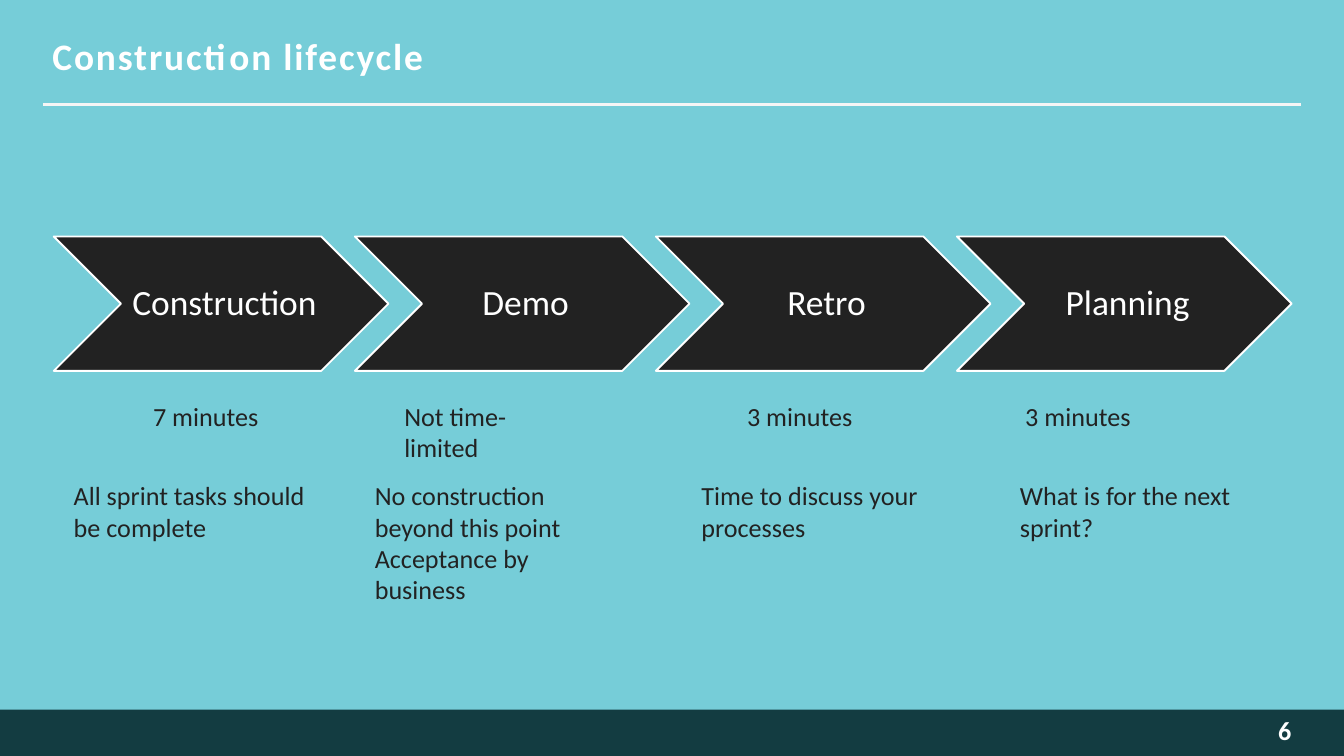
import pptx
import pptx.dml.color
import pptx.enum.shapes
import pptx.enum.text
import pptx.oxml
import pptx.util
from pptx.util import Inches

COLORS = {
    "background": "76CDD8",
    "footer": "133C41",
    "rule": "F5F5F5",
    "white": "FFFFFF",
    "page": "FEFEFE",
    "dark": "222222",
}
ALIGN = pptx.enum.text.PP_ALIGN
ANCHOR = pptx.enum.text.MSO_ANCHOR
SHAPE = pptx.enum.shapes.MSO_SHAPE

STAGE_PITCH = 2.24
# name, time limit, time offset and width, notes, notes offset, width and height
STAGES = [
    ("Construction", "7 minutes", 0.64, 0.98,
     ["All sprint tasks should be complete"], 0.05, 2.02, 0.57),
    ("Demo", "Not time-limited", 0.27, 1.5,
     ["No construction beyond this point", "Acceptance by business"], 0.05, 2.05, 1.04),
    ("Retro", "3 minutes", 0.58, 0.98,
     ["Time to discuss your processes"], 0.24, 2.05, 0.81),
    ("Planning", "3 minutes", 0.41, 0.98,
     ["What is for the next sprint?"], 0.37, 2.05, 0.57),
]


def rgb(name):
    return pptx.dml.color.RGBColor.from_string(COLORS[name])


def write(shape, paragraphs, size=14, color="dark", bold=False, align=ALIGN.LEFT,
          anchor=ANCHOR.TOP, insets=(0.1, 0.05, 0.1, 0.05), wrap=True,
          line_spacing=None, tracking=None):
    """Fill a shape with formatted paragraphs; insets run left, top, right, bottom."""
    frame = shape.text_frame
    frame.auto_size = pptx.enum.text.MSO_AUTO_SIZE.NONE
    frame.word_wrap = wrap
    frame.vertical_anchor = anchor
    (frame.margin_left, frame.margin_top,
     frame.margin_right, frame.margin_bottom) = map(Inches, insets)
    for index, text in enumerate(paragraphs):
        paragraph = frame.add_paragraph() if index else frame.paragraphs[0]
        paragraph.alignment = align
        paragraph.line_spacing = line_spacing
        run = paragraph.add_run()
        run.text = text
        run.font.name = "Calibri"
        run.font.size = pptx.util.Pt(size)
        run.font.bold = bold
        run.font.color.rgb = rgb(color)
        if tracking:
            run.font._element.set("spc", str(tracking * 100))


def add_block(shapes, kind, left, top, width, height, fill, outline=None):
    block = shapes.add_shape(kind, Inches(left), Inches(top), Inches(width), Inches(height))
    block.shadow.inherit = False
    block.fill.solid()
    block.fill.fore_color.rgb = rgb(fill)
    if outline:
        block.line.color.rgb = rgb(outline)
        block.line.width = pptx.util.Pt(1)
    else:
        block.line.fill.background()
    return block


def add_text(slide, paragraphs, left, top, width, height, **text_format):
    box = slide.shapes.add_textbox(Inches(left), Inches(top), Inches(width), Inches(height))
    write(box, paragraphs, **text_format)


def add_header(slide, left, top, width):
    title = slide.shapes.title
    title.left, title.top = Inches(left + 0.07), Inches(top)
    title.width, title.height = Inches(width - 0.14), Inches(0.33)
    write(title, ["Construction lifecycle"], size=20, color="white", bold=True,
          anchor=ANCHOR.MIDDLE, insets=(0, 0.05, 0, 0.05), wrap=False, tracking=1)
    rule_y = Inches(top + 0.53)
    rule = slide.shapes.add_connector(pptx.enum.shapes.MSO_CONNECTOR.STRAIGHT,
                                      Inches(left), rule_y, Inches(left + width), rule_y)
    rule.line.color.rgb = rgb("rule")
    rule.line.width = pptx.util.Pt(1.5)
    rule._element.spPr.append(pptx.oxml.parse_xml(
        '<a:effectLst xmlns:a="http://schemas.openxmlformats.org/drawingml/2006/main"/>'))


def add_footer(slide, left, top, width, height):
    add_block(slide.shapes, SHAPE.RECTANGLE, left, top, width, height, "footer")
    add_text(slide, ["6"], left + width - 1.89, top, 1.5, height, color="page", bold=True,
             align=ALIGN.RIGHT, anchor=ANCHOR.MIDDLE, insets=(0.1, 0.05, 0, 0.09))


def add_lifecycle(slide, left, top):
    """Place the row of chevrons with the time limit and notes under each."""
    chevrons = slide.shapes.add_group_shape()
    for index, stage in enumerate(STAGES):
        name, limit, limit_x, limit_width, notes, notes_x, notes_width, notes_height = stage
        stage_left = left + index * STAGE_PITCH
        chevron = add_block(chevrons.shapes, SHAPE.CHEVRON, stage_left, top, 2.49, 1,
                            "dark", outline="white")
        write(chevron, [name], size=19, color="white", align=ALIGN.CENTER,
              anchor=ANCHOR.MIDDLE, insets=(0.08, 0.03, 0.03, 0.03), wrap=False,
              line_spacing=0.9)
        add_text(slide, [limit], stage_left + limit_x, top + 1.17, limit_width, 0.34,
                 wrap=limit_width > 1)
        add_text(slide, notes, stage_left + notes_x, top + 1.76, notes_width, notes_height)


def main():
    deck = pptx.Presentation()
    deck.slide_width = Inches(10)
    deck.slide_height = deck.slide_width * 9 // 16
    slide = deck.slides.add_slide(deck.slide_layouts[5])
    slide.background.fill.solid()
    slide.background.fill.fore_color.rgb = rgb("background")
    add_footer(slide, 0, 5.28, 10, 0.35)
    add_header(slide, 0.32, 0.25, 9.36)
    add_lifecycle(slide, 0.4, 1.76)
    deck.save("out.pptx")


if __name__ == "__main__":
    main()
